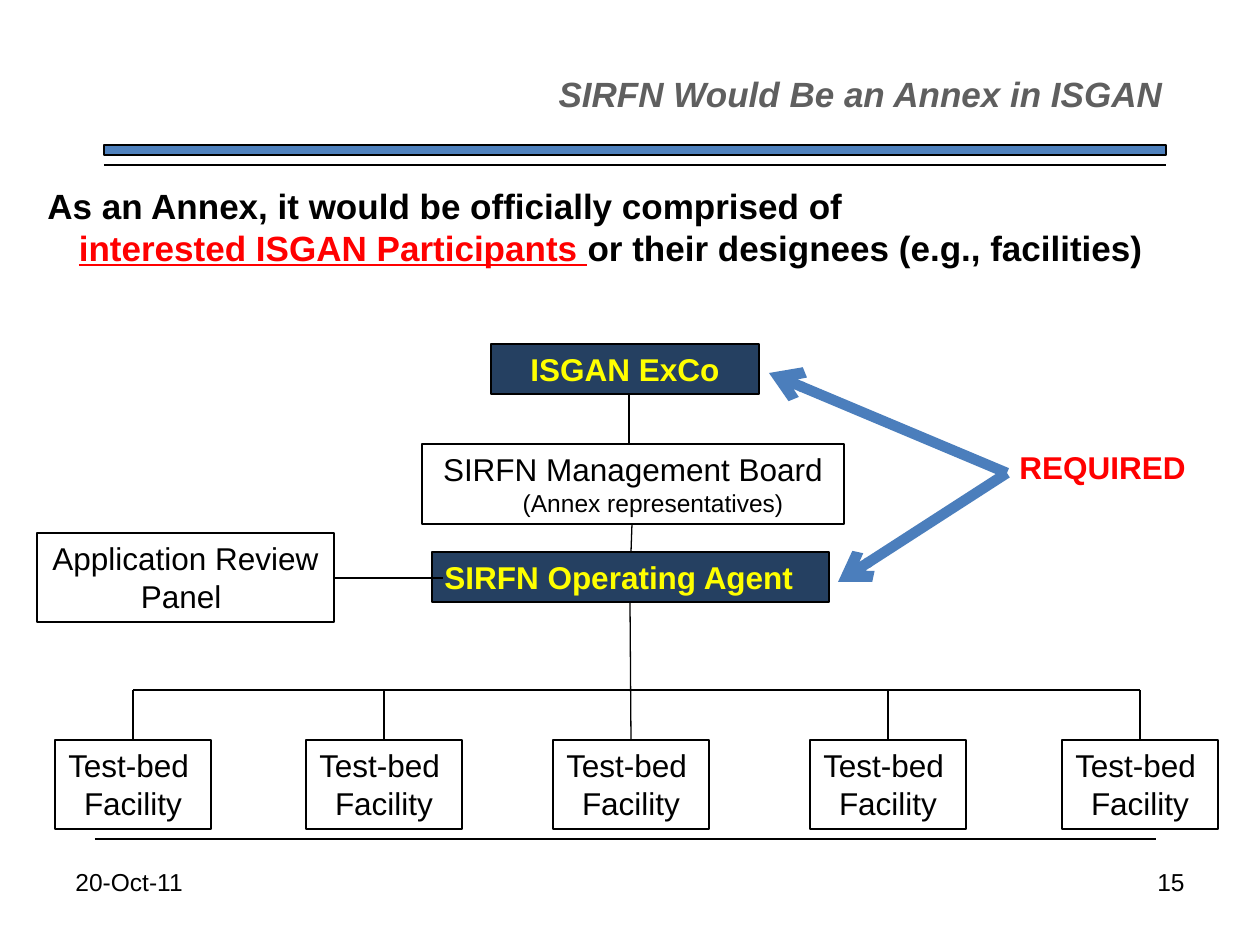
import pptx
import pptx.util
import pptx.dml.color
import pptx.enum.shapes
import pptx.enum.text
import lxml.etree

PX = 914400 / 126
FONT = "Arial"
BLACK, RED, YELLOW, GREY = "000000", "FF0000", "FFFF00", "5F5F5F"
NAVY, BLUE, ARROW_BLUE = "254061", "4F81BD", "4B7EBC"
ALIGN = pptx.enum.text.PP_ALIGN
LEFT, CENTER, RIGHT = ALIGN.LEFT, ALIGN.CENTER, ALIGN.RIGHT

# Content: plain texts as (text, area, alignment, wrap, style)
PLAIN_TEXTS = [
    ("20-Oct-11", (63, 861, 294, 65), LEFT, True, {"size": 14}),
    ("15", (903, 861, 294, 65), RIGHT, True, {"size": 14}),
    ("SIRFN Would Be an Annex in ISGAN", (541, 66, 634, 55), RIGHT, False,
     {"size": 20, "color": GREY, "bold": True, "italic": True}),
    ("REQUIRED", (1007, 442, 208, 51), LEFT, True,
     {"size": 18, "color": RED, "bold": True}),
]
STATEMENT_AREA = (35, 178, 1211, 97)
STATEMENT_LINES = [
    [("As an Annex, it would be officially comprised of ", {})],
    [("interested ISGAN Participants ", {"color": RED, "underline": True}),
     ("or their designees (e.g., facilities)", {})],
]

# Content: organisation boxes as (lines, area, alignment, fill)
FACILITY_CENTERS = [133, 384, 631, 888, 1140]
FACILITY_TOP, FACILITY_WIDTH, FACILITY_HEIGHT = 740, 156, 89
BOXES = [
    (["Application Review", "Panel "], (37, 533, 297, 89), CENTER, None),
    (["SIRFN Management Board", "(Annex representatives)"],
     (422, 444, 422, 80), CENTER, None),
    (["ISGAN ExCo"], (491, 344, 268, 50), CENTER, NAVY),
    (["SIRFN Operating Agent"], (432, 552, 397, 50), LEFT, NAVY),
] + [
    (["Test-bed ", "Facility"],
     (center - FACILITY_WIDTH // 2, FACILITY_TOP, FACILITY_WIDTH, FACILITY_HEIGHT),
     CENTER, None)
    for center in FACILITY_CENTERS
]

# Content: lines as (x1, y1, x2, y2)
BUS_Y = 690
RULES = [(104, 165, 1166, 165), (95, 839, 1156, 839)]
LINKS = [
    (629, 394, 629, 444),
    (632, 524, 631, 552),
    (630, 602, 631, FACILITY_TOP),
    (334, 578, 443, 578),
    (FACILITY_CENTERS[0], BUS_Y, FACILITY_CENTERS[-1], BUS_Y),
] + [
    (center, FACILITY_TOP, center, BUS_Y)
    for center in FACILITY_CENTERS if center != 631
]
REQUIRED_ARROWS = [(1007, 473, 769, 373), (1007, 473, 838, 582)]


def emu(*lengths):
    return [pptx.util.Emu(round(length * PX)) for length in lengths]


def rgb(color):
    return pptx.dml.color.RGBColor.from_string(color)


def add_run(paragraph, text, size, color=BLACK, bold=False, italic=False,
            underline=False):
    run = paragraph.add_run()
    run.text = text
    font = run.font
    font.name, font.size = FONT, pptx.util.Pt(size)
    font.bold, font.italic, font.underline = bold, italic, underline
    font.color.rgb = rgb(color)


def add_text_box(slide, area, wrap=True):
    frame = slide.shapes.add_textbox(*emu(*area)).text_frame
    frame.word_wrap = wrap
    return frame


def add_rectangle(slide, area, fill):
    shape = slide.shapes.add_shape(
        pptx.enum.shapes.MSO_SHAPE.RECTANGLE, *emu(*area))
    shape.shadow.inherit = False
    if fill:
        shape.fill.solid()
        shape.fill.fore_color.rgb = rgb(fill)
    else:
        shape.fill.background()
    shape.line.color.rgb = rgb(BLACK)
    shape.line.width = pptx.util.Pt(0.75)
    return shape


def add_box(slide, lines, area, alignment, fill):
    frame = add_rectangle(slide, area, fill).text_frame
    frame.word_wrap = bool(fill)
    frame.vertical_anchor = pptx.enum.text.MSO_ANCHOR.TOP
    for index, text in enumerate(lines):
        paragraph = frame.add_paragraph() if index else frame.paragraphs[0]
        paragraph.alignment = alignment
        is_note = text.startswith("(")
        if is_note:
            paragraph._p.get_or_add_pPr().set("marL", str(pptx.util.Pt(23)))
        add_run(paragraph, text, 14 if is_note else 18,
                YELLOW if fill else BLACK, bold=bool(fill))


def add_line(slide, ends, color=BLACK, width=0.75, arrow=False):
    connector = slide.shapes.add_connector(
        pptx.enum.shapes.MSO_CONNECTOR.STRAIGHT, *emu(*ends))
    connector.line.color.rgb = rgb(color)
    connector.line.width = pptx.util.Pt(width)
    namespace = pptx.oxml.ns.qn
    if arrow:
        lxml.etree.SubElement(connector.line._get_or_add_ln(),
                              namespace("a:tailEnd"), type="arrow")
    lxml.etree.SubElement(connector._element.spPr, namespace("a:effectLst"))


def main():
    presentation = pptx.Presentation()
    presentation.slide_width, presentation.slide_height = emu(1260, 945)
    slide = presentation.slides.add_slide(presentation.slide_layouts[6])

    # Header bar and rules
    for ends in RULES:
        add_line(slide, ends)
    add_rectangle(slide, (104, 145, 1062, 10), BLUE)

    # Title, footer and label
    for text, area, alignment, wrap, style in PLAIN_TEXTS:
        paragraph = add_text_box(slide, area, wrap).paragraphs[0]
        paragraph.alignment = alignment
        add_run(paragraph, text, **style)

    # Statement with a hanging indent
    paragraph = add_text_box(slide, STATEMENT_AREA).paragraphs[0]
    indent = pptx.util.Inches(0.25)
    properties = paragraph._p.get_or_add_pPr()
    properties.set("marL", str(indent))
    properties.set("indent", str(-indent))
    for index, runs in enumerate(STATEMENT_LINES):
        if index:
            paragraph.add_line_break()
        for text, style in runs:
            add_run(paragraph, text, 20, bold=True, **style)

    # Organisation chart
    for box in BOXES:
        add_box(slide, *box)
    for ends in LINKS:
        add_line(slide, ends)
    for ends in REQUIRED_ARROWS:
        add_line(slide, ends, ARROW_BLUE, 6, arrow=True)

    presentation.save("out.pptx")


if __name__ == "__main__":
    main()
